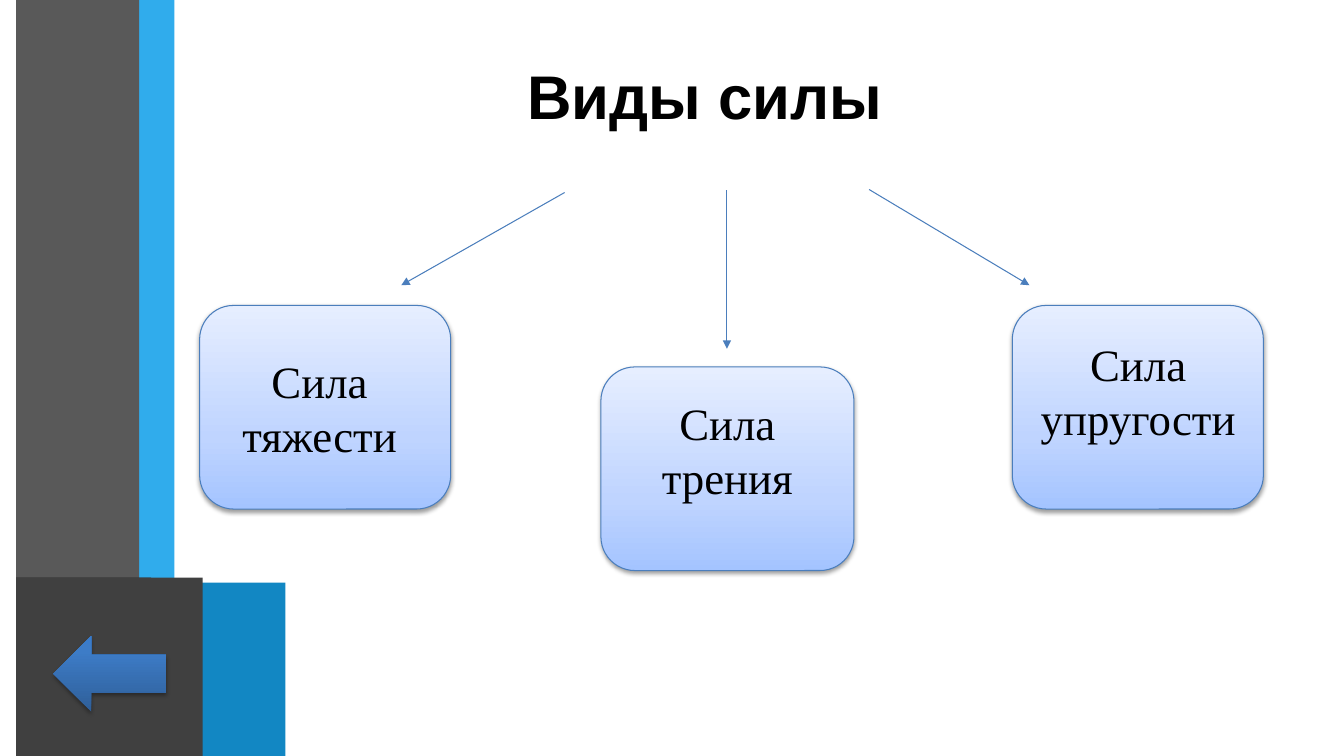
from dataclasses import dataclass

from lxml.etree import SubElement
from pptx import Presentation
from pptx.dml.color import RGBColor
from pptx.enum.shapes import MSO_CONNECTOR, MSO_SHAPE
from pptx.enum.text import MSO_ANCHOR, MSO_AUTO_SIZE, PP_ALIGN
from pptx.oxml.ns import qn
from pptx.util import Inches, Pt


@dataclass(frozen=True)
class Theme:
    light_blue: str = "30ACEC"
    blue: str = "1287C3"
    navy: str = "0C5A82"
    gray: str = "595959"
    dark_gray: str = "404040"
    charcoal: str = "262626"
    outline: str = "4B7EBC"
    text: str = "000000"
    shadow: str = "000000"
    card_stops: tuple = ((0, "A4C4FF"), (35, "BFD4FF"), (100, "E6EEFF"))
    arrow_stops: tuple = ((0, "2F5F99"), (80, "3D7CC7"), (100, "3A7CCB"))
    title_font: str = "Arial"
    card_font: str = "Times New Roman"
    title_size: int = 44
    card_size: int = 32


THEME = Theme()


def color(value):
    return RGBColor.from_string(value)


def inches(box):
    return [Inches(length) for length in box]


def write(frame, text, *, font, size, bold=False, align=PP_ALIGN.LEFT, spacing=1.0):
    para = frame.paragraphs[0]
    para.alignment = align
    para.line_spacing = spacing
    span = para.add_run()
    span.text = text
    span.font.name = font
    span.font.size = Pt(size)
    span.font.bold = bold
    span.font.color.rgb = color(THEME.text)


def add_plain_shape(page, kind, box):
    shape = page.shapes.add_shape(kind, *inches(box))
    shape.shadow.inherit = False
    shape.line.fill.background()
    return shape


def set_gradient(shape, stops):
    """Fill the shape from bottom to top with (percent, colour) stops."""
    shape.fill.gradient()
    shape.fill.gradient_angle = 90
    stop_list = shape._element.spPr.find(qn("a:gradFill")).find(qn("a:gsLst"))
    for stop in list(stop_list):
        stop_list.remove(stop)
    for percent, value in stops:
        stop = SubElement(stop_list, qn("a:gs"), pos=str(percent * 1000))
        SubElement(stop, qn("a:srgbClr"), val=value)


def set_shadow(shape, opacity, distance):
    """Drop a soft shadow straight down; opacity in percent, distance in points."""
    effects = shape._element.spPr.find(qn("a:effectLst"))
    shadow = SubElement(effects, qn("a:outerShdw"), blurRad=str(Pt(3.1)),
                        dist=str(Pt(distance)), dir="5400000", rotWithShape="0")
    tint = SubElement(shadow, qn("a:srgbClr"), val=THEME.shadow)
    SubElement(tint, qn("a:alpha"), val=str(opacity * 1000))


def add_side_band(page, box):
    left, top, _, height = box
    bottom = top + height
    bars = (
        (0.34, 1.23, 0, 5.83, THEME.light_blue),
        (0, 1.22, 0, 5.77, THEME.gray),
        (0, 1.34, 5.73, bottom - 5.73, THEME.charcoal),
        (0.34, 1.63, 5.79, bottom - 5.79, THEME.navy),
        (0.34, 2.33, 5.78, bottom - 5.78, THEME.blue),
        (0, 1.85, 5.73, bottom - 5.73, THEME.dark_gray),
    )
    for indent, width, offset, tall, fill in bars:
        bar = add_plain_shape(page, MSO_SHAPE.RECTANGLE,
                              (left + indent, top + offset, width, tall))
        bar.fill.solid()
        bar.fill.fore_color.rgb = color(fill)


def add_title(page, box, text):
    title = page.shapes.title
    title.left, title.top, title.width, title.height = inches(box)
    frame = title.text_frame
    frame.auto_size = MSO_AUTO_SIZE.NONE
    frame.word_wrap = False
    frame.vertical_anchor = MSO_ANCHOR.MIDDLE
    frame.margin_left = frame.margin_right = frame.margin_top = frame.margin_bottom = 0
    write(frame, text, font=THEME.title_font, size=THEME.title_size, bold=True,
          spacing=0.9)


def add_back_arrow(page, box):
    arrow = add_plain_shape(page, MSO_SHAPE.LEFT_ARROW, box)
    set_gradient(arrow, THEME.arrow_stops)
    set_shadow(arrow, 35, 1.8)


def add_card(page, box):
    card = add_plain_shape(page, MSO_SHAPE.ROUNDED_RECTANGLE, box)
    set_gradient(card, THEME.card_stops)
    card.line.color.rgb = color(THEME.outline)
    card.line.width = Pt(0.75)
    set_shadow(card, 38, 1.6)


def add_label(page, box, text):
    frame = page.shapes.add_textbox(*inches(box)).text_frame
    frame.word_wrap = True
    frame.auto_size = MSO_AUTO_SIZE.SHAPE_TO_FIT_TEXT
    write(frame, text, font=THEME.card_font, size=THEME.card_size,
          align=PP_ALIGN.CENTER)


def add_arrow(page, start, end):
    arrow = page.shapes.add_connector(MSO_CONNECTOR.STRAIGHT,
                                      *inches(start), *inches(end))
    arrow.line.color.rgb = color(THEME.outline)
    arrow.line.width = Pt(0.75)
    properties = arrow._element.spPr
    SubElement(properties.find(qn("a:ln")), qn("a:tailEnd"), type="triangle")
    SubElement(properties, qn("a:effectLst"))


def add_force_diagram(page, box):
    """Place the cards, their labels and the arrows leading to them."""
    left, top, _, _ = box
    # card x, y, width; label x, y, width; text; arrow start and end
    forces = (
        (0, 1.15, 2.49, 0.11, 1.58, 2.16, "Сила тяжести", (3.62, 0.03), (2, 0.95)),
        (3.98, 1.76, 2.51, 4.2, 2, 2.07, "Сила трения", (5.23, 0.01), (5.23, 1.58)),
        (8.06, 1.15, 2.49, 8.23, 1.41, 2.16, "Сила упругости", (6.64, 0), (8.23, 0.95)),
    )
    for x, y, width, *_ in forces:
        add_card(page, (left + x, top + y, width, 2.02))
    for _, _, _, x, y, width, text, start, end in forces:
        add_label(page, (left + x, top + y, width, 1.18), text)
        add_arrow(page, (left + start[0], top + start[1]),
                  (left + end[0], top + end[1]))


def main():
    deck = Presentation()
    deck.slide_width, deck.slide_height = Inches(13.33), Inches(7.5)
    page = deck.slides.add_slide(deck.slide_layouts[5])
    add_side_band(page, (0.16, 0, 2.67, 7.5))
    add_title(page, (5.23, 0.29, 3.96, 1.4), "Виды силы")
    add_back_arrow(page, (0.53, 6.31, 1.12, 0.75))
    add_force_diagram(page, (1.98, 1.88, 10.55, 3.78))
    deck.save("out.pptx")


if __name__ == "__main__":
    main()
